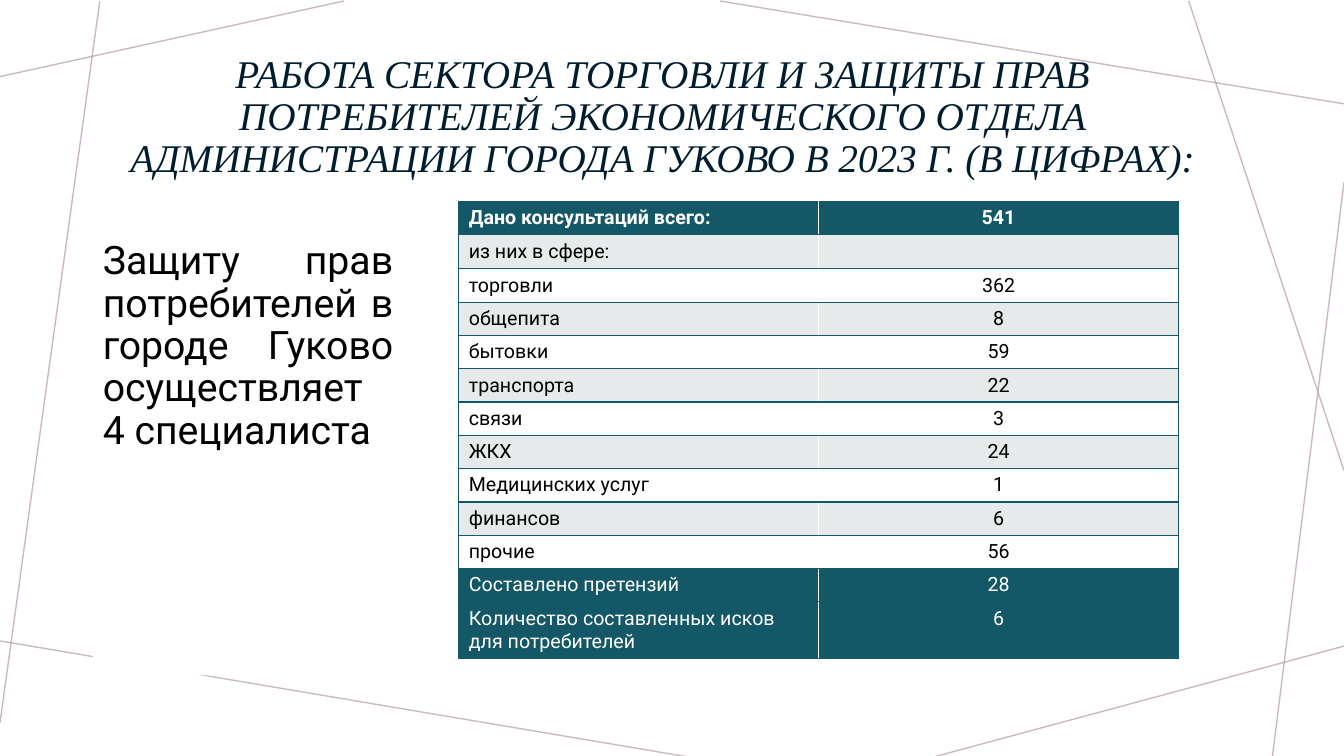
from dataclasses import dataclass
from typing import NamedTuple

from lxml.etree import SubElement
from pptx import Presentation
from pptx.dml.color import RGBColor
from pptx.enum.shapes import MSO_CONNECTOR
from pptx.enum.text import MSO_ANCHOR, MSO_AUTO_SIZE, PP_ALIGN
from pptx.oxml.ns import qn
from pptx.util import Inches, Pt


@dataclass(frozen=True)
class Theme:
    teal: str = "145766"
    band: str = "E7EAEA"
    white: str = "FFFFFF"
    black: str = "000000"
    navy: str = "001D2E"
    ray: str = "B99B9F"
    heading_font: str = "Times New Roman"
    body_font: str = "Roboto"
    large: int = 28
    small: int = 14
    hairline: int = 1


class Ray(NamedTuple):
    x1: float
    y1: float
    x2: float
    y2: float


class Row(NamedTuple):
    label: str
    count: str
    accent: bool = False
    bold: bool = False


THEME = Theme()
RAYS = [
    Ray(3.41, 0.01, 0, 0.76),
    Ray(0.99, 0.01, 0, 7.17),
    Ray(6.83, 7.51, -0.05, 6.35),
    Ray(13.33, 6.41, 9.26, 7.51),
    Ray(13.33, 1.81, 12.62, 7.51),
    Ray(13.33, 4.67, 11.79, 0.01),
    Ray(13.33, 1.03, 7.14, 0.01),
]
ROWS = [
    Row("Дано консультаций всего:", "541", accent=True, bold=True),
    Row("из них в сфере:", ""),
    Row("торговли", "362"),
    Row("общепита", "8"),
    Row("бытовки", "59"),
    Row("транспорта", "22"),
    Row("связи", "3"),
    Row("ЖКХ", "24"),
    Row("Медицинских услуг", "1"),
    Row("финансов", "6"),
    Row("прочие", "56"),
    Row("Составлено претензий", "28", accent=True),
    Row("Количество составленных исков для потребителей", "6", accent=True),
]
ROW_HEIGHT, LAST_ROW_HEIGHT, COLUMN_WIDTH = 0.33, 0.56, 3.57


def write(frame, text: str, *, size: int, color: str, font: str = THEME.body_font,
          align=PP_ALIGN.LEFT, bold: bool = False, italic: bool = False,
          spacing: float = 1.0, after: int = 0) -> None:
    paragraph = frame.paragraphs[0]
    paragraph.alignment = align
    paragraph.line_spacing = spacing
    paragraph.space_before = Pt(0)
    paragraph.space_after = Pt(after)
    if not text:
        # An empty cell still needs its type size to keep the row low
        SubElement(paragraph._p, qn("a:endParaRPr"), sz=str(size * 100))
        return
    run = paragraph.add_run()
    run.text = text
    run.font.name = font
    run.font.size = Pt(size)
    run.font.bold = bold
    run.font.italic = italic
    run.font.color.rgb = RGBColor.from_string(color)


def place(placeholder, left: float, top: float, width: float, height: float, anchor):
    placeholder.left, placeholder.top = Inches(left), Inches(top)
    placeholder.width, placeholder.height = Inches(width), Inches(height)
    frame = placeholder.text_frame
    frame.word_wrap = True
    frame.auto_size = MSO_AUTO_SIZE.NONE
    frame.vertical_anchor = anchor
    return frame


def draw_ray(slide, ray: Ray) -> None:
    line = slide.shapes.add_connector(MSO_CONNECTOR.STRAIGHT, *map(Inches, ray))
    line.line.color.rgb = RGBColor.from_string(THEME.ray)
    line.line.width = Pt(THEME.hairline)
    SubElement(line._element.find(".//" + qn("a:srgbClr")), qn("a:alpha"), val="70000")
    SubElement(line._element.spPr, qn("a:effectLst"))
    # Keep the rays behind the placeholders
    slide.shapes._spTree.insert(2, line._element)


def style_cell(cell, sides: str, fill: str) -> None:
    properties = cell._tc.get_or_add_tcPr()
    for side in sides:
        border = SubElement(properties, qn(f"a:ln{side}"), w=str(Pt(THEME.hairline)))
        SubElement(SubElement(border, qn("a:solidFill")), qn("a:srgbClr"), val=THEME.teal)
    cell.fill.solid()
    cell.fill.fore_color.rgb = RGBColor.from_string(fill)


def draw_table(slide, rows: list[Row]) -> None:
    height = ROW_HEIGHT * (len(rows) - 1) + LAST_ROW_HEIGHT
    table = slide.shapes.add_table(len(rows), 2, Inches(4.55), Inches(2),
                                   Inches(2 * COLUMN_WIDTH), Inches(height)).table
    table.first_row = table.horz_banding = False
    for column in table.columns:
        column.width = Inches(COLUMN_WIDTH)
    for index, row in enumerate(rows):
        last = index == len(rows) - 1
        table.rows[index].height = Inches(LAST_ROW_HEIGHT if last else ROW_HEIGHT)
        fill = THEME.teal if row.accent else THEME.band if index % 2 else THEME.white
        color = THEME.white if row.accent else THEME.black
        columns = ((row.label, "LTB", PP_ALIGN.LEFT), (row.count, "RTB", PP_ALIGN.CENTER))
        for position, (text, sides, align) in enumerate(columns):
            cell = table.cell(index, position)
            style_cell(cell, sides, fill)
            write(cell.text_frame, text, size=THEME.small, color=color,
                  align=align, bold=row.bold)


def main() -> None:
    presentation = Presentation()
    presentation.slide_width, presentation.slide_height = Inches(13.33), Inches(7.5)
    slide = presentation.slides.add_slide(presentation.slide_layouts[1])

    # Background rays
    for ray in RAYS:
        draw_ray(slide, ray)

    # Heading
    heading = place(slide.shapes.title, 0.92, 0.4, 11.3, 1.45, MSO_ANCHOR.BOTTOM)
    write(heading, "РАБОТА СЕКТОРА ТОРГОВЛИ И ЗАЩИТЫ ПРАВ ПОТРЕБИТЕЛЕЙ ЭКОНОМИЧЕСКОГО "
          "ОТДЕЛА АДМИНИСТРАЦИИ ГОРОДА ГУКОВО В 2023 Г. (В ЦИФРАХ):",
          size=THEME.large, color=THEME.navy, font=THEME.heading_font,
          align=PP_ALIGN.CENTER, italic=True, spacing=0.9)

    # Staff note
    staff = slide.placeholders[1]
    staff.fill.solid()
    staff.fill.fore_color.rgb = RGBColor.from_string(THEME.white)
    staff_frame = place(staff, 0.92, 2.34, 3.08, 4.36, MSO_ANCHOR.TOP)
    staff_format = staff_frame.paragraphs[0]._p.get_or_add_pPr()
    staff_format.set("marL", "0")
    staff_format.set("indent", "0")
    SubElement(staff_format, qn("a:buNone"))
    write(staff_frame, "Защиту прав потребителей в городе Гуково осуществляет 4 специалиста",
          size=THEME.large, color=THEME.black, align=PP_ALIGN.JUSTIFY,
          spacing=0.9, after=5)

    # Consultation figures
    draw_table(slide, ROWS)
    presentation.save("out.pptx")


if __name__ == "__main__":
    main()
